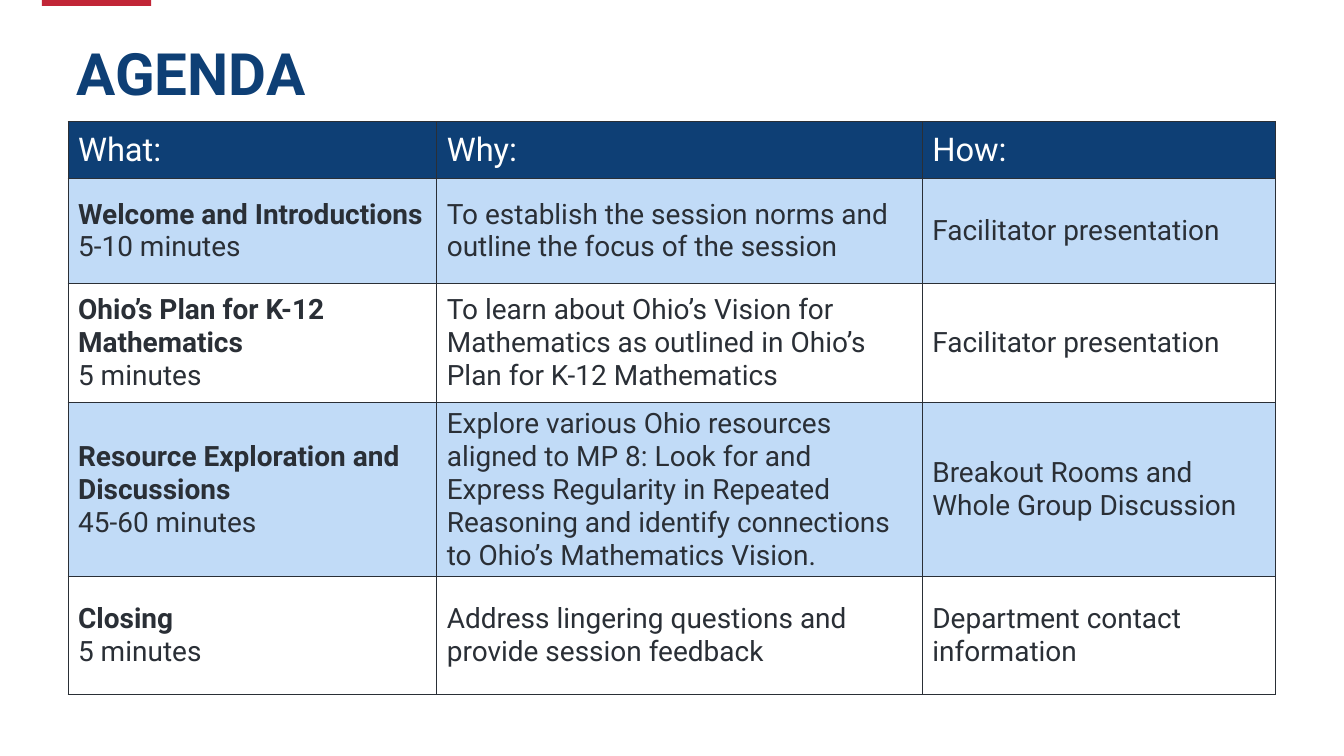
from dataclasses import dataclass

from lxml.etree import SubElement
from pptx import Presentation
from pptx.dml.color import RGBColor
from pptx.enum.shapes import MSO_SHAPE
from pptx.enum.text import MSO_ANCHOR, MSO_AUTO_SIZE, PP_ALIGN
from pptx.oxml.ns import qn
from pptx.util import Inches, Pt


@dataclass(frozen=True)
class Theme:
    font: str = "Roboto"
    navy: str = "0E3F75"
    red: str = "C12637"
    band: str = "C1DBF7"
    ink: str = "2A2F36"
    white: str = "FFFFFF"
    title_size: int = 50
    head_size: int = 28
    body_size: int = 24


THEME = Theme()
COL_WIDTHS = (4.39, 5.78, 4.2)
ROW_HEIGHTS = (0.67, 1.26, 1.41, 2.07, 1.4)
HEADINGS = ("What:", "Why:", "How:")
AGENDA = (
    ("Welcome and Introductions\n5-10 minutes",
     "To establish the session norms and outline the focus of the session",
     "Facilitator presentation"),
    ("Ohio’s Plan for K-12 Mathematics\n5 minutes",
     "To learn about Ohio’s Vision for Mathematics as outlined in Ohio’s Plan for K-12 Mathematics",
     "Facilitator presentation"),
    ("Resource Exploration and Discussions\n45-60 minutes",
     "Explore various Ohio resources aligned to MP 8: Look for and Express Regularity in "
     "Repeated Reasoning and identify connections to Ohio’s Mathematics Vision.",
     "Breakout Rooms and Whole Group Discussion"),
    ("Closing\n5 minutes",
     "Address lingering questions and provide session feedback",
     "Department contact information"),
)


def style(p, size, color, bold=False):
    p.font.name = THEME.font
    p.font.size = Pt(size)
    p.font.bold = bold
    p.font.color.rgb = RGBColor.from_string(color)


def add_accent(s, x, y, w, h):
    sp = s.shapes.add_shape(MSO_SHAPE.RECTANGLE, Inches(x), Inches(y), Inches(w), Inches(h))
    sp.shadow.inherit = False
    sp.fill.solid()
    sp.fill.fore_color.rgb = RGBColor.from_string(THEME.red)
    sp.line.fill.background()


def set_title(s, text, x, y, w, h):
    sp = s.shapes.title
    sp.left, sp.top, sp.width, sp.height = map(Inches, (x, y, w, h))
    tf = sp.text_frame
    tf.text = text
    tf.auto_size = MSO_AUTO_SIZE.NONE
    tf.vertical_anchor = MSO_ANCHOR.MIDDLE
    p = tf.paragraphs[0]
    p.alignment = PP_ALIGN.LEFT
    p.line_spacing = 0.9
    style(p, THEME.title_size, THEME.navy, True)


def set_borders(cell):
    """Draw a thin line on all four sides; the lines must precede the fill."""
    tc_pr = cell._tc.get_or_add_tcPr()
    for i, side in enumerate(("lnL", "lnR", "lnT", "lnB")):
        ln = SubElement(tc_pr, qn(f"a:{side}"), w=str(Pt(1)))
        fill = SubElement(ln, qn("a:solidFill"))
        SubElement(fill, qn("a:srgbClr"), val=THEME.ink)
        tc_pr.insert(i, ln)


def fill_cell(cell, text, row, col):
    cell.text = text
    cell.vertical_anchor = MSO_ANCHOR.MIDDLE
    cell.margin_left = cell.margin_right = Inches(0.12)
    cell.margin_top = cell.margin_bottom = Inches(0.06)
    if row == 0 or row % 2:
        cell.fill.solid()
        cell.fill.fore_color.rgb = RGBColor.from_string(THEME.band if row else THEME.navy)
    else:
        cell.fill.background()
    set_borders(cell)
    for i, p in enumerate(cell.text_frame.paragraphs):
        if row == 0:
            style(p, THEME.head_size, THEME.white)
        else:
            style(p, THEME.body_size, THEME.ink, bold=col == 0 and i == 0)


def add_agenda_table(s, x, y):
    rows = (HEADINGS, *AGENDA)
    table = s.shapes.add_table(
        len(rows), len(HEADINGS), Inches(x), Inches(y),
        Inches(sum(COL_WIDTHS)), Inches(sum(ROW_HEIGHTS))).table
    table.first_row = table.horz_banding = False
    for column, width in zip(table.columns, COL_WIDTHS):
        column.width = Inches(width)
    for r, (texts, height) in enumerate(zip(rows, ROW_HEIGHTS)):
        table.rows[r].height = Inches(height)
        for c, text in enumerate(texts):
            fill_cell(table.cell(r, c), text, r, c)


def main():
    prs = Presentation()
    prs.slide_width, prs.slide_height = Inches(16), Inches(9)
    s = prs.slides.add_slide(prs.slide_layouts[5])
    add_accent(s, 0.5, 0, 1.3, 0.07)
    set_title(s, "AGENDA", 0.81, 0.48, 14.04, 0.87)
    add_agenda_table(s, 0.81, 1.45)
    prs.save("out.pptx")


if __name__ == "__main__":
    main()
